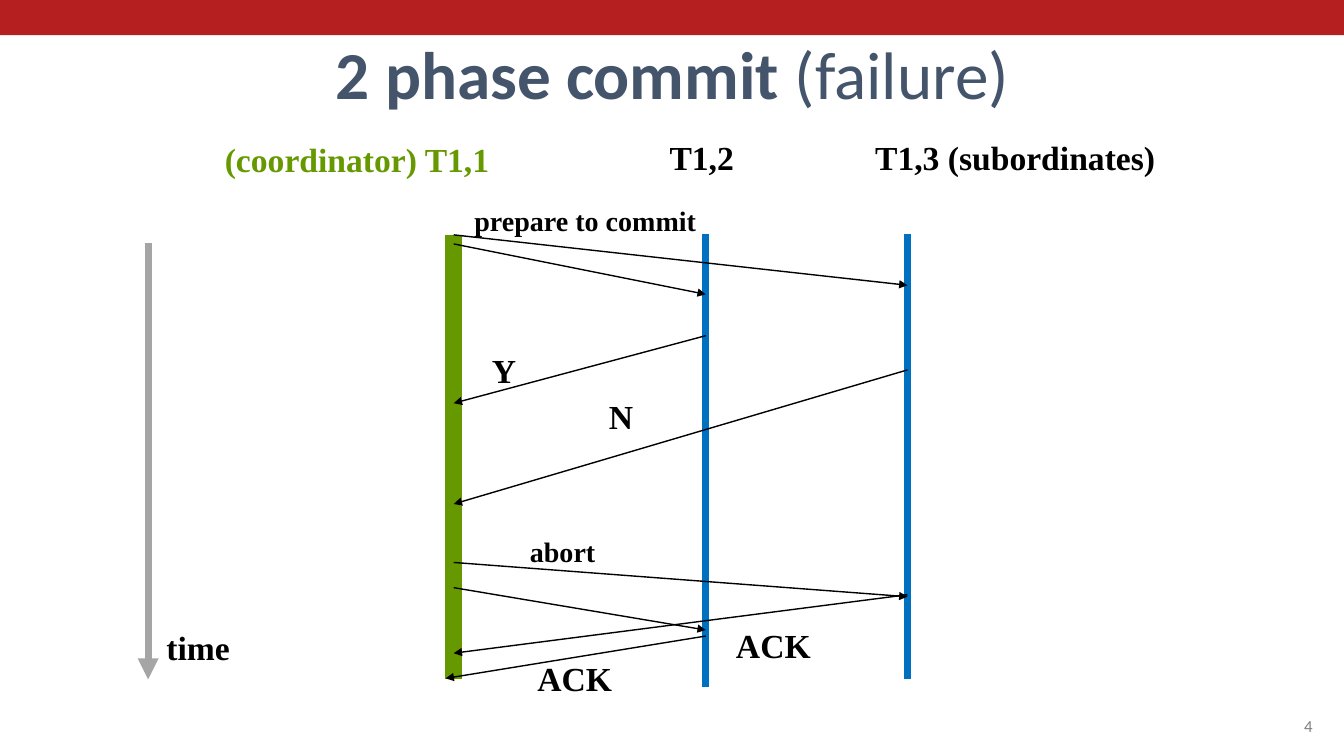
import pptx
import pptx.dml.color
import pptx.enum.shapes
import pptx.enum.text
import pptx.oxml
import pptx.oxml.ns
import pptx.util

Inches = pptx.util.Inches
Pt = pptx.util.Pt
RGB = pptx.dml.color.RGBColor.from_string
ALIGN = pptx.enum.text.PP_ALIGN
ANCHOR = pptx.enum.text.MSO_ANCHOR

COLORS = {
    "banner": "B51F1F",
    "title": "44546A",
    "number": "7F7F7F",
    "time": "A5A5A5",
    "coordinator": "669900",
    "subordinate": "0070C0",
    "ink": "000000",
}

deck = pptx.Presentation()
deck.slide_width, deck.slide_height = Inches(13.33), Inches(7.5)
slide = deck.slides.add_slide(deck.slide_layouts[5])


def write_text(runs, at, box=None, size=24, color="ink", font="Times New Roman",
               align=ALIGN.CENTER, anchor=ANCHOR.TOP):
    """Fill box, or a new text box, with (text, bold) runs."""
    left, top, width, height = map(Inches, at)
    if box is None:
        box = slide.shapes.add_textbox(left, top, width, height)
    box.left, box.top, box.width, box.height = left, top, width, height
    frame = box.text_frame
    frame.auto_size = pptx.enum.text.MSO_AUTO_SIZE.NONE
    frame.word_wrap = True
    frame.vertical_anchor = anchor
    frame.margin_left = frame.margin_right = Inches(0.05)
    frame.margin_top = frame.margin_bottom = Inches(0.05)
    paragraph = frame.paragraphs[0]
    paragraph.alignment = align
    for text, bold in runs:
        run = paragraph.add_run()
        run.text = text
        run.font.name = font
        run.font.size = Pt(size)
        run.font.bold = bold
        run.font.color.rgb = RGB(COLORS[color])


def draw_line(start, end, color="ink", width=1, arrow=True):
    line = slide.shapes.add_connector(
        pptx.enum.shapes.MSO_CONNECTOR.STRAIGHT, *map(Inches, start + end))
    line.line.color.rgb = RGB(COLORS[color])
    line.line.width = Pt(width)
    if arrow:
        line.line._get_or_add_ln().append(pptx.oxml.parse_xml(
            '<a:tailEnd %s type="triangle"/>' % pptx.oxml.ns.nsdecls("a")))
    properties = line._element.spPr
    properties.append(pptx.oxml.parse_xml(
        "<a:effectLst %s/>" % pptx.oxml.ns.nsdecls("a")))


banner = slide.shapes.add_shape(
    pptx.enum.shapes.MSO_SHAPE.RECTANGLE, 0, 0, deck.slide_width, Inches(0.35))
banner.shadow.inherit = False
banner.fill.solid()
banner.fill.fore_color.rgb = RGB(COLORS["banner"])
banner.line.fill.background()

write_text([("2 phase commit ", True), ("(failure)", False)], (0.67, 0.3, 12, 0.87),
           box=slide.shapes.title, size=48, color="title", font="Calibri",
           anchor=ANCHOR.BOTTOM)
write_text([("4", False)], (9.51, 6.83, 3.56, 0.52), size=12, color="number",
           font="Calibri", align=ALIGN.RIGHT, anchor=ANCHOR.BOTTOM)

# Time axis and the lifelines of the three transactions
T1_1, T1_2, T1_3 = 4.5, 7, 9
draw_line((1.47, 2.41), (1.47, 6.74), "time", 5)
for x, top, bottom, color, width in [
    (T1_1, 2.33, 6.74, "coordinator", 12),
    (T1_2, 2.32, 6.82, "subordinate", 5),
    (T1_3, 2.32, 6.74, "subordinate", 5),
]:
    draw_line((x, top), (x, bottom), color, width, arrow=False)

# Messages: prepare, votes, abort, acknowledgements
for sender, sent, receiver, received in [
    (T1_1, 2.42, T1_2, 2.92),
    (T1_1, 2.33, T1_3, 2.83),
    (T1_2, 3.33, T1_1, 4),
    (T1_3, 3.67, T1_1, 5),
    (T1_1, 5.58, T1_3, 5.92),
    (T1_1, 5.83, T1_2, 6.25),
    (T1_2, 6.31, 4.42, 6.73),
    (T1_3, 5.9, T1_1, 6.48),
]:
    draw_line((sender, sent), (receiver, received))

for text, at, size in [
    ("time", (1.55, 6.17, 0.83, 0.5), 24),
    ("T1,2", (6.54, 1.31, 0.84, 0.5), 24),
    ("prepare to commit", (4.38, 1.97, 2.85, 0.44), 20),
    ("Y", (4.78, 3.42, 0.44, 0.5), 24),
    ("N", (5.94, 3.88, 0.44, 0.5), 24),
    ("abort", (5.09, 5.25, 0.98, 0.44), 20),
    ("ACK", (7.2, 6.15, 0.94, 0.5), 24),
    ("ACK", (5.23, 6.48, 0.94, 0.5), 24),
]:
    write_text([(text, True)], at, size=size)

write_text([("(coordinator) T1,1", True)], (2.18, 1.33, 3.28, 0.5),
           color="coordinator", align=ALIGN.LEFT)
write_text([("T1,3 (subordinates)", True)], (8.63, 1.31, 3.28, 0.5), align=ALIGN.LEFT)

deck.save("out.pptx")
